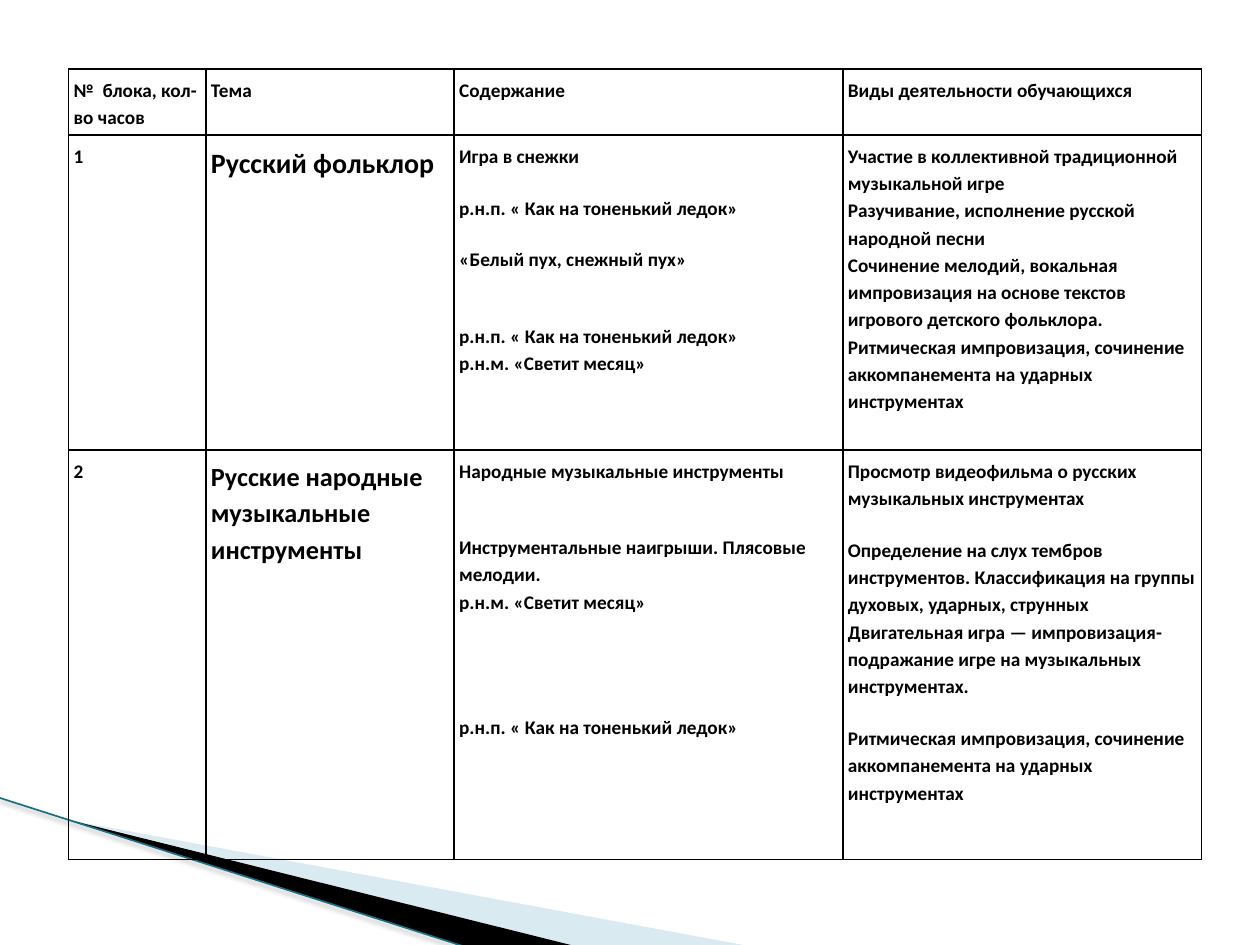
"""Build a slide with a lesson plan table over a corner of diagonal ribbons."""
import pptx
import pptx.util
import pptx.dml.color
import pptx.enum.shapes
import pptx.oxml
import pptx.oxml.ns

NS = pptx.oxml.ns.nsdecls("a")
qn = pptx.oxml.ns.qn


def color(value):
    return pptx.dml.color.RGBColor.from_string(value)


prs = pptx.Presentation()
prs.slide_width = pptx.util.Inches(10)
prs.slide_height = pptx.util.Inches(7.5)
W, H = prs.slide_width, prs.slide_height
s = prs.slides.add_slide(prs.slide_layouts[6])

ribbons = [
    ("A0CBDC", 40, (0.078, 0.729, 0.416, 0.211),
     [(0.055, 0.868), (0.595, 1.0013), (0.456, 1.0013), (0.055, 0.867)]),
    ("000000", 100, (-0.006, 0.844, 0.416, 0.123),
     [(0.053, 0.867), (0.457, 1.0013), (0.372, 1.0027), (0.054, 0.867)]),
]
for fill, opacity, frame, points in ribbons:
    corners = [(round(x * W), round(y * H)) for x, y in points]
    builder = s.shapes.build_freeform(*corners[0])
    builder.add_line_segments(corners[1:], close=True)
    sp = builder.convert_to_shape()
    sp.left, sp.top, sp.width, sp.height = [
        round(share * side) for share, side in zip(frame, (W, H, W, H))]
    outline = sp._element.spPr.find(".//" + qn("a:path"))
    outline.set("w", str(sp.width))
    outline.set("h", str(sp.height))
    for pt, (x, y) in zip(outline.iter(qn("a:pt")), corners):
        pt.set("x", str(x - sp.left))
        pt.set("y", str(y - sp.top))
    sp.shadow.inherit = False
    sp.line.fill.background()
    sp.fill.solid()
    sp.fill.fore_color.rgb = color(fill)
    clr = sp._element.spPr.find(".//" + qn("a:srgbClr"))
    clr.append(pptx.oxml.parse_xml(f'<a:alpha {NS} val="{opacity * 1000}"/>'))

edge = s.shapes.add_connector(
    pptx.enum.shapes.MSO_CONNECTOR.STRAIGHT,
    round(-0.001 * W), round(0.844 * H), round(0.371 * W), round(1.0027 * H))
edge.line.color.rgb = color("196F85")
edge.line.width = pptx.util.Pt(0.95)
edge._element.spPr.append(pptx.oxml.parse_xml(
    f'<a:effectLst {NS}><a:outerShdw blurRad="39400" dist="20300" dir="5400000" rotWithShape="0">'
    '<a:srgbClr val="000000"><a:alpha val="38000"/></a:srgbClr></a:outerShdw></a:effectLst>'))

LINE_GAP = 14
SONG = "р.н.п. « Как на тоненький ледок»"
MOON = "р.н.м. «Светит месяц»"
RHYTHM = "Ритмическая импровизация, сочинение аккомпанемента на ударных инструментах"
rows = [
    [[(0, "№  блока, кол-во часов")], [(0, "Тема")], [(0, "Содержание")],
     [(0, "Виды деятельности обучающихся")]],
    [[(0, "1")],
     [(0, "Русский фольклор")],
     [(0, "Игра в снежки"), (1, SONG), (1, "«Белый пух, снежный пух»"), (2, SONG), (0, MOON)],
     [(0, "Участие в коллективной традиционной музыкальной игре"),
      (0, "Разучивание, исполнение русской народной песни"),
      (0, "Сочинение мелодий, вокальная импровизация на основе текстов "
          "игрового детского фольклора."),
      (0, RHYTHM)]],
    [[(0, "2")],
     [(0, "Русские народные музыкальные инструменты")],
     [(0, "Народные музыкальные инструменты"),
      (2, "Инструментальные наигрыши. Плясовые мелодии."), (0, MOON), (4, SONG)],
     [(0, "Просмотр видеофильма о русских музыкальных инструментах"),
      (1, "Определение на слух тембров инструментов. Классификация на группы "
          "духовых, ударных, струнных Двигательная игра — импровизация-подражание "
          "игре на музыкальных инструментах."),
      (1, RHYTHM)]],
]
theme_sizes = {(1, 1): 16, (2, 1): 15}
col_shares = [0.109, 0.197, 0.3085, 0.2845]
row_shares = [2 / 30, 10 / 30, 13 / 30]

table = s.shapes.add_table(
    len(rows), len(col_shares), round(0.0545 * W), round(0.073 * H),
    round(sum(col_shares) * W), round(sum(row_shares) * H)).table
table.first_row = table.horz_banding = False
for column, share in zip(table.columns, col_shares):
    column.width = round(share * W)
for row, share in zip(table.rows, row_shares):
    row.height = round(share * H)

for i, row in enumerate(rows):
    for j, lines in enumerate(row):
        cell = table.cell(i, j)
        cell.margin_left = cell.margin_right = pptx.util.Inches(0.04)
        cell.margin_top = pptx.util.Inches(0.05)
        cell.margin_bottom = pptx.util.Inches(0.04)
        cell.fill.background()
        tcPr = cell._tc.get_or_add_tcPr()
        for k, side in enumerate(["lnL", "lnR", "lnT", "lnB"]):
            tcPr.insert(k, pptx.oxml.parse_xml(
                f'<a:{side} {NS} w="12192"><a:solidFill><a:srgbClr val="000000"/>'
                f'</a:solidFill></a:{side}>'))
        tf = cell.text_frame
        tf.text = "\n".join(text for gap, text in lines)
        for p, (gap, text) in zip(tf.paragraphs, lines):
            p.line_spacing = 1.15
            p.space_before = pptx.util.Pt(gap * LINE_GAP)
            for r in p.runs:
                r.font.name = "Calibri"
                r.font.size = pptx.util.Pt(theme_sizes.get((i, j), 11))
                r.font.bold = True
                r.font.color.rgb = color("000000")

prs.save("out.pptx")
